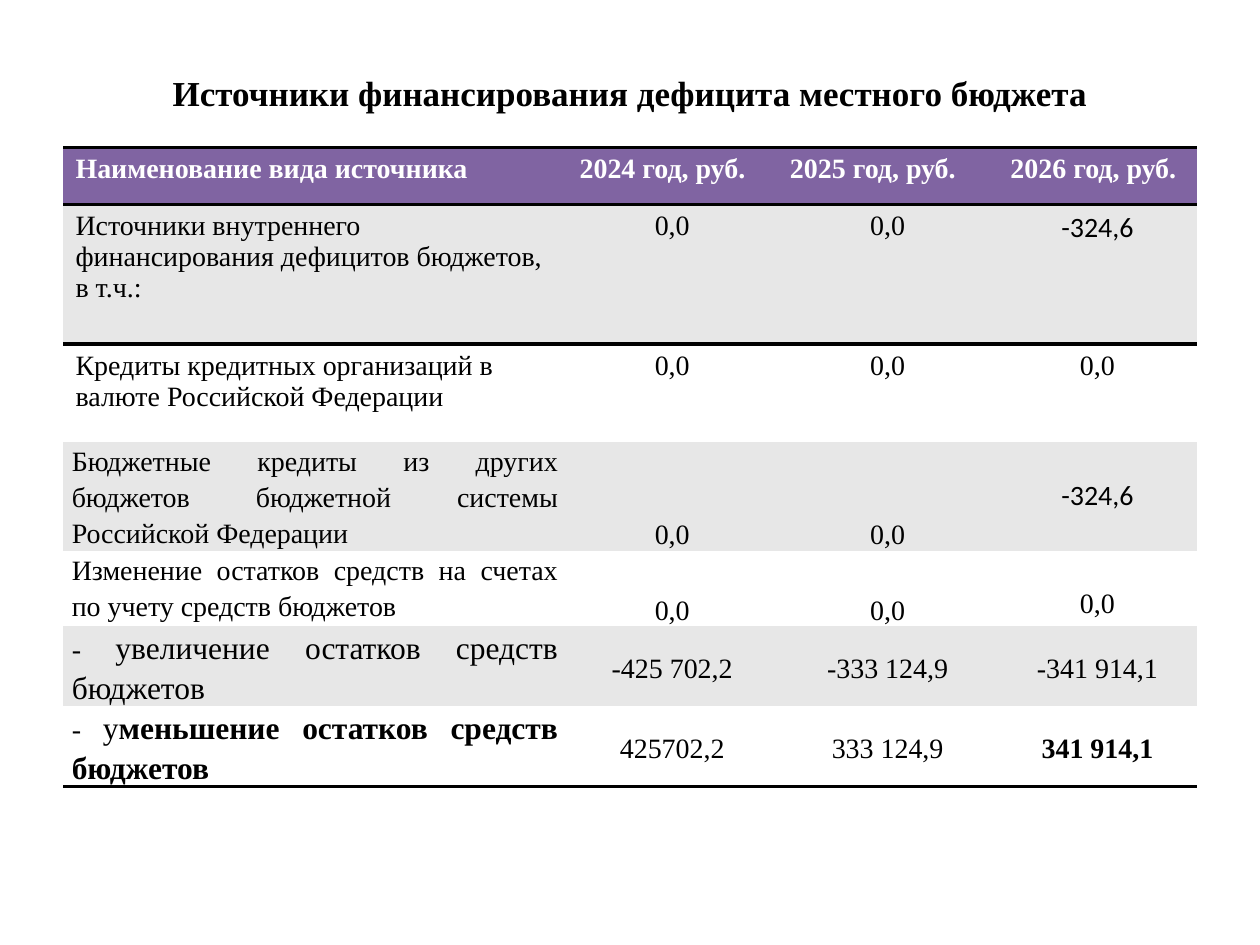
from dataclasses import dataclass

from lxml.etree import SubElement
from pptx import Presentation
from pptx.dml.color import RGBColor
from pptx.enum.text import MSO_ANCHOR, PP_ALIGN
from pptx.oxml import parse_xml
from pptx.oxml.ns import nsdecls, qn
from pptx.util import Inches, Pt


@dataclass(frozen=True)
class Theme:
    """Colours, fonts and type sizes of the slide."""
    black: str = "000000"
    white: str = "FFFFFF"
    header: str = "8064A2"
    band: str = "E7E7E7"
    serif: str = "Times New Roman"
    sans: str = "Calibri"
    title_size: int = 20
    body_size: int = 16
    large_size: int = 18
    border_width: int = 2


THEME = Theme()
TITLE = "Источники финансирования дефицита местного бюджета"
COLUMN_WIDTHS = [4, 1.67, 1.75, 1.58]
ROW_HEIGHTS = [0.45, 1.11, 0.78, 0.86, 0.6, 0.63, 0.63]
PLAIN_STYLE = "{2D5ABB26-0587-4C30-8999-92F81FD0307C}"
LARGE = {"size": THEME.large_size}
LARGE_BOLD = {"size": THEME.large_size, "bold": True}
SANS = {"name": THEME.sans}
ROWS = [
    ["Наименование вида источника", "2024 год, руб.", "2025 год, руб.", "2026 год, руб."],
    ["Источники внутреннего финансирования дефицитов бюджетов, в т.ч.:",
     "0,0", "0,0", [("-324,6", SANS)]],
    ["Кредиты кредитных организаций в валюте Российской Федерации", "0,0", "0,0", "0,0"],
    ["Бюджетные кредиты из других бюджетов бюджетной системы Российской Федерации",
     "0,0", "0,0", [("-324,6", SANS)]],
    ["Изменение остатков средств на счетах по учету средств бюджетов", "0,0", "0,0", "0,0"],
    [[("- ", {}), ("увеличение остатков средств бюджетов", LARGE)],
     "-425 702,2", "-333 124,9", "-341 914,1"],
    [[("- ", {}), ("у", LARGE), ("меньшение остатков средств бюджетов", LARGE_BOLD)],
     "425702,2", "333 124,9", [("341 914,1", {"bold": True})]],
]
HEADER_FORMAT = {"bold": True, "color": THEME.white}
BORDERS = {0: ["lnT", "lnB"], 1: ["lnT"], len(ROWS) - 1: ["lnB"]}
FIRST_COMPACT_ROW = 3
FIRST_TOTAL_ROW = 5


def set_attributes(target, values):
    """Set each named attribute of the target."""
    for name, value in values.items():
        setattr(target, name, value)


def add_run(paragraph, text, size=THEME.body_size, name=THEME.serif, bold=False,
            color=THEME.black):
    """Add one formatted run to the paragraph."""
    run = paragraph.add_run()
    run.text = text
    set_attributes(run.font, {"size": Pt(size), "name": name, "bold": bold})
    run.font.color.rgb = RGBColor.from_string(color)


def add_title(slide):
    """Place and fill the title placeholder."""
    title = slide.shapes.title
    set_attributes(title, {"left": Inches(0.5), "top": Inches(0.3),
                           "width": Inches(9), "height": Inches(0.87)})
    title.text_frame.vertical_anchor = MSO_ANCHOR.MIDDLE
    paragraph = title.text_frame.paragraphs[0]
    paragraph.alignment = PP_ALIGN.CENTER
    add_run(paragraph, TITLE, size=THEME.title_size, bold=True)


def add_borders(cell, sides):
    """Draw solid lines on the given sides of the cell."""
    properties = cell._tc.get_or_add_tcPr()
    for index, side in enumerate(sides):
        line = parse_xml(f'<a:{side} {nsdecls("a")} w="{Pt(THEME.border_width)}"/>')
        fill = SubElement(line, qn("a:solidFill"))
        SubElement(fill, qn("a:srgbClr"), val=THEME.black)
        properties.insert(index, line)


def cell_layout(row, column):
    """Return the cell and paragraph formats for a table position."""
    compact = row >= FIRST_COMPACT_ROW
    total = row >= FIRST_TOTAL_ROW
    tight = compact and (column < 3 or total)
    cell_format = {"vertical_anchor": MSO_ANCHOR.TOP}
    paragraph_format = {"alignment": PP_ALIGN.LEFT}
    if tight:
        cell_format.update(margin_left=Inches(0.07), margin_right=Inches(0.07),
                           margin_top=0, margin_bottom=0)
        paragraph_format["line_spacing"] = 1.15
    if column == 0 and compact:
        paragraph_format["alignment"] = PP_ALIGN.JUSTIFY
    elif column and row:
        paragraph_format["alignment"] = PP_ALIGN.CENTER
        if total or (row, column) == (FIRST_COMPACT_ROW, 3):
            cell_format["vertical_anchor"] = MSO_ANCHOR.MIDDLE
        elif compact:
            cell_format["vertical_anchor"] = MSO_ANCHOR.BOTTOM
    return cell_format, paragraph_format


def fill_cell(cell, content, row, column):
    """Write and format one table cell."""
    cell_format, paragraph_format = cell_layout(row, column)
    set_attributes(cell, cell_format)
    paragraph = cell.text_frame.paragraphs[0]
    set_attributes(paragraph, paragraph_format)
    runs = [(content, {})] if isinstance(content, str) else content
    for text, run_format in runs:
        add_run(paragraph, text, **({} if row else HEADER_FORMAT), **run_format)
    band = THEME.band if row % 2 else THEME.white
    cell.fill.solid()
    cell.fill.fore_color.rgb = RGBColor.from_string(band if row else THEME.header)
    add_borders(cell, BORDERS.get(row, []))


def add_budget_table(slide):
    """Add the table of deficit financing sources."""
    frame = slide.shapes.add_table(
        len(ROWS), len(COLUMN_WIDTHS), Inches(0.5), Inches(1.17),
        Inches(sum(COLUMN_WIDTHS)), Inches(sum(ROW_HEIGHTS)))
    table = frame.table
    set_attributes(table, {"first_row": False, "horz_banding": False})
    table._tbl.tblPr.find(qn("a:tableStyleId")).text = PLAIN_STYLE
    for column, width in zip(table.columns, COLUMN_WIDTHS):
        column.width = Inches(width)
    for row, height in zip(table.rows, ROW_HEIGHTS):
        row.height = Inches(height)
    for row, contents in enumerate(ROWS):
        for column, content in enumerate(contents):
            fill_cell(table.cell(row, column), content, row, column)


def main():
    """Build and save the presentation."""
    presentation = Presentation()
    set_attributes(presentation, {"slide_width": Inches(10), "slide_height": Inches(7.5)})
    slide = presentation.slides.add_slide(presentation.slide_layouts.get_by_name("Title Only"))
    add_title(slide)
    add_budget_table(slide)
    presentation.save("out.pptx")


if __name__ == "__main__":
    main()
